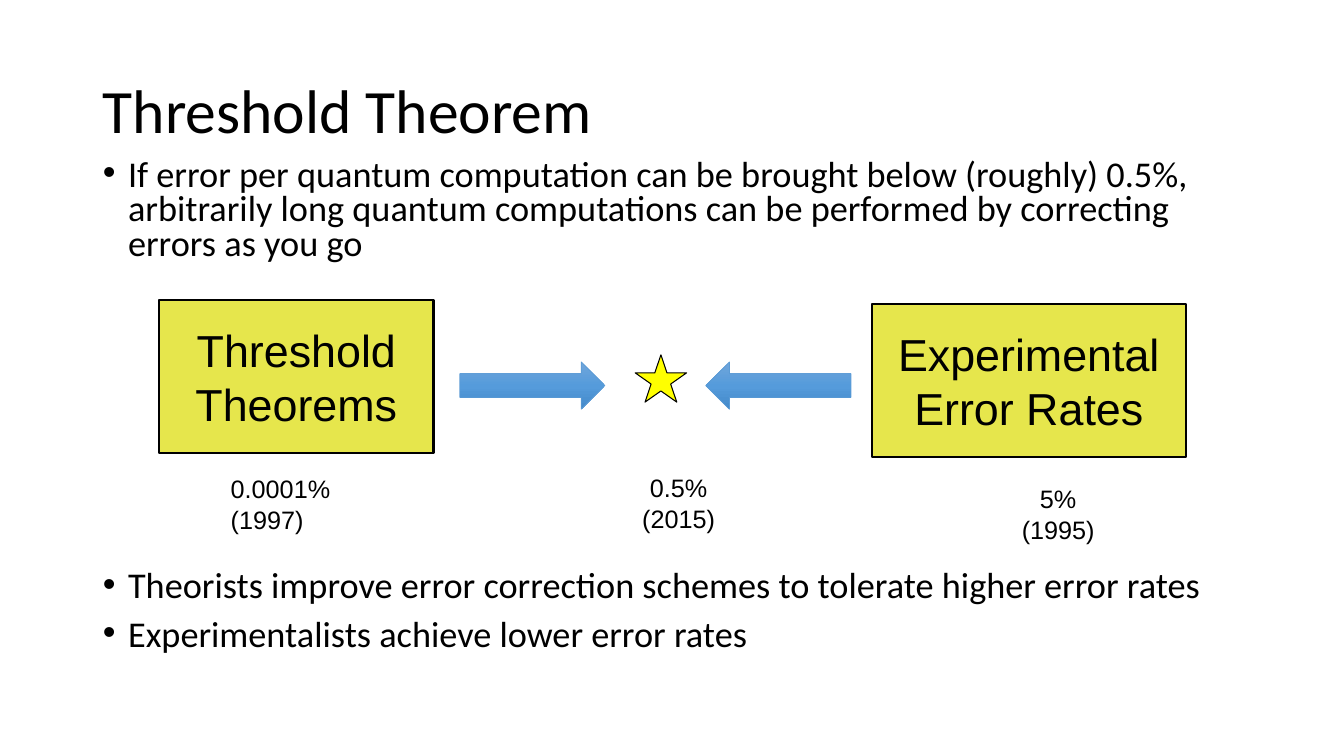
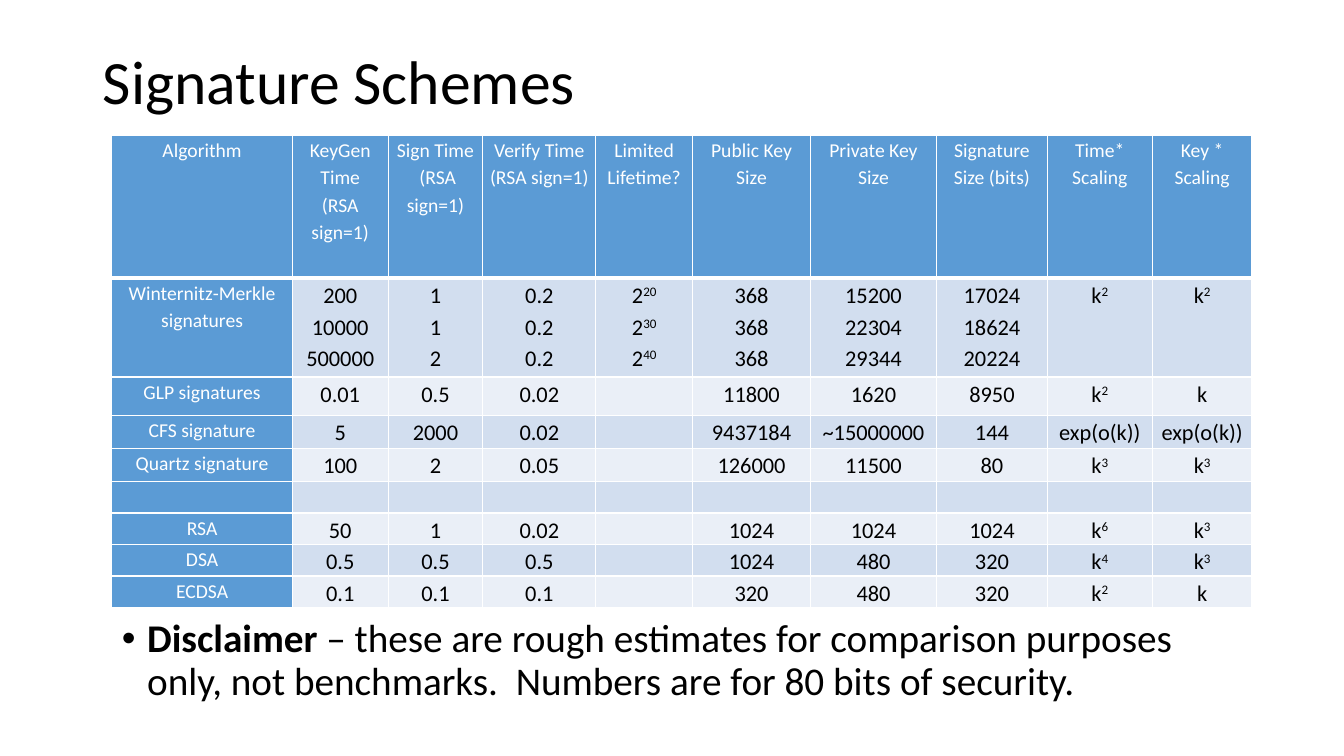
from copy import deepcopy
from dataclasses import dataclass

from lxml import etree
from pptx import Presentation
from pptx.dml.color import RGBColor
from pptx.enum.shapes import MSO_SHAPE as Preset
from pptx.enum.text import MSO_ANCHOR as Anchor, MSO_AUTO_SIZE as AutoSize, PP_ALIGN as Align
from pptx.oxml.ns import qn
from pptx.util import Inches, Pt

# Shared look
BLACK, WHITE, BLUE = "000000", "FFFFFF", "5B9BD5"
BOX_YELLOW, STAR_YELLOW = "E6E64C", "FFFF00"
BANDS = ("D2DEEF", "EAEFF7")
ARROW_STOPS = ((0, "71A6DB"), (0.5, "559BDB"), (1, "448ACA"))
BODY_FONT, DIAGRAM_FONT = "Calibri", "Arial"


@dataclass
class Area:
    left: float
    top: float
    width: float
    height: float

    def lengths(self):
        return [Inches(n) for n in (self.left, self.top, self.width, self.height)]


@dataclass
class Bullet:
    text: str
    lead: str = ""
    space_before: float = 10


@dataclass
class Block:
    """A diagram box or caption with one paragraph per line."""
    area: Area
    lines: tuple
    align: Align = Align.CENTER


BOXES = (
    Block(Area(1.58, 2.98, 2.72, 1.51), ("Threshold", "Theorems")),
    Block(Area(8.65, 3.02, 3.11, 1.51), ("Experimental", "Error Rates")),
)
CAPTIONS = (
    Block(Area(2.19, 4.65, 1.46, 0.66), ("0.0001%", "(1997)"), Align.LEFT),
    Block(Area(6.12, 4.64, 1.22, 0.66), ("0.5%", "(2015)")),
    Block(Area(9.89, 4.75, 1.21, 0.66), ("5%", "(1995)")),
)
ARROWS = (
    (Preset.RIGHT_ARROW, Area(4.56, 3.59, 1.44, 0.47)),
    (Preset.LEFT_ARROW, Area(7, 3.59, 1.44, 0.47)),
)
THRESHOLD_BULLETS = (
    Bullet("If error per quantum computation can be brought below (roughly) 0.5%, "
           "arbitrarily long quantum computations can be performed by correcting errors as you go"),
    # The wide gap leaves room for the diagram
    Bullet("Theorists improve error correction schemes to tolerate higher error rates",
           space_before=219),
    Bullet("Experimentalists achieve lower error rates"),
)
DISCLAIMER = Bullet(" – these are rough estimates for comparison purposes only, not benchmarks.  "
                    "Numbers are for 80 bits of security.", lead="Disclaimer")

# Table: "\n" parts paragraphs, "^" marks a superscript
COLUMN_WIDTHS = (1.79, 0.95, 0.94, 1.12, 0.96, 1.17, 1.25, 1.1, 1.04, 0.99)
ROW_HEIGHTS = (1.42, 0.98, 0.38, 0.33, 0.33, 0.31, 0.31, 0.31, 0.31)
SCHEMES = (
    ("Algorithm", "KeyGen Time\n(RSA sign=1)", "Sign Time\n (RSA sign=1)",
     "Verify Time\n(RSA sign=1)", "Limited Lifetime?", "Public Key Size", "Private Key Size",
     "Signature Size (bits)", "Time* Scaling", "Key *\nScaling"),
    ("Winternitz-Merkle signatures", "200\n10000\n500000", "1\n1\n2", "0.2\n0.2\n0.2",
     "2^20\n2^30\n2^40", "368\n368\n368", "15200\n22304\n29344", "17024\n18624\n20224",
     "k^2", "k^2"),
    ("GLP signatures", "0.01", "0.5", "0.02", "", "11800", "1620", "8950", "k^2", "k"),
    ("CFS signature", "5", "2000", "0.02", "", "9437184", "~15000000", "144",
     "exp(o(k))", "exp(o(k))"),
    ("Quartz signature", "100", "2", "0.05", "", "126000", "11500", "80", "k^3", "k^3"),
    ("",) * 10,
    ("RSA", "50", "1", "0.02", "", "1024", "1024", "1024", "k^6", "k^3"),
    ("DSA", "0.5", "0.5", "0.5", "", "1024", "480", "320", "k^4", "k^3"),
    ("ECDSA", "0.1", "0.1", "0.1", "", "320", "480", "320", "k^2", "k"),
)


def rgb(color: str) -> RGBColor:
    return RGBColor.from_string(color)


def apply(target, formats: dict) -> None:
    for name, value in formats.items():
        setattr(target, name, value)


def add_run(paragraph, text: str, size: float, color: str = BLACK,
            font: str = BODY_FONT, bold: bool = False):
    run = paragraph.add_run()
    run.text = text
    apply(run.font, {"name": font, "size": Pt(size), "bold": bold})
    run.font.color.rgb = rgb(color)
    return run


def next_paragraph(frame, index: int):
    return frame.add_paragraph() if index else frame.paragraphs[0]


def place(shape, area: Area) -> None:
    apply(shape, dict(zip(("left", "top", "width", "height"), area.lengths())))


# Titles and lists
def add_slide(presentation, title: str, title_top: float):
    slide = presentation.slides.add_slide(presentation.slide_layouts[1])
    place(slide.shapes.title, Area(0.92, title_top, 11.5, 1.45))
    frame = slide.shapes.title.text_frame
    apply(frame, {"vertical_anchor": Anchor.MIDDLE, "auto_size": AutoSize.NONE})
    apply(frame.paragraphs[0], {"alignment": Align.LEFT, "line_spacing": 0.9})
    add_run(frame.paragraphs[0], title, 44)
    return slide


def fill_body(slide, area: Area, bullets: tuple, size: float, line_spacing: float) -> None:
    body = slide.placeholders[1]
    place(body, area)
    body.text_frame.auto_size = AutoSize.NONE
    for index, bullet in enumerate(bullets):
        paragraph = next_paragraph(body.text_frame, index)
        apply(paragraph, {"line_spacing": line_spacing, "space_before": Pt(bullet.space_before)})
        properties = paragraph._p.get_or_add_pPr()
        properties.set("marL", str(Inches(0.25)))
        properties.set("indent", str(-Inches(0.25)))
        if bullet.lead:
            add_run(paragraph, bullet.lead, size, bold=True)
        add_run(paragraph, bullet.text, size)


# Diagram parts
def add_preset(slide, preset: Preset, area: Area, line_color: str, line_width: float):
    shape = slide.shapes.add_shape(preset, *area.lengths())
    shape.shadow.inherit = False
    shape.line.color.rgb = rgb(line_color)
    shape.line.width = Pt(line_width)
    return shape


def fill_solid(target, color: str) -> None:
    target.fill.solid()
    target.fill.fore_color.rgb = rgb(color)


def write_lines(frame, block: Block, size: float) -> None:
    for index, line in enumerate(block.lines):
        paragraph = next_paragraph(frame, index)
        paragraph.alignment = block.align
        add_run(paragraph, line, size, font=DIAGRAM_FONT)


def add_box(slide, block: Block) -> None:
    shape = add_preset(slide, Preset.RECTANGLE, block.area, BLACK, 1.45)
    fill_solid(shape, BOX_YELLOW)
    apply(shape.text_frame, {
        "word_wrap": False, "vertical_anchor": Anchor.MIDDLE,
        "margin_left": Inches(0.11), "margin_right": Inches(0.11),
        "margin_top": Inches(0.06), "margin_bottom": Inches(0.06)})
    write_lines(shape.text_frame, block, 32)


def add_caption(slide, block: Block) -> None:
    frame = slide.shapes.add_textbox(*block.area.lengths()).text_frame
    frame.word_wrap = True
    write_lines(frame, block, 18)


def add_arrow(slide, preset: Preset, area: Area) -> None:
    shape = add_preset(slide, preset, area, BLUE, 0.5)
    shape.fill.gradient()
    shape.fill.gradient_angle = 270
    # The default gradient has two stops; add the middle one
    stop_list = next(shape._element.iter(qn("a:gsLst")))
    stop_list.insert(1, deepcopy(stop_list[0]))
    for stop, (position, color) in zip(shape.fill.gradient_stops, ARROW_STOPS):
        stop.position = position
        stop.color.rgb = rgb(color)


# Table parts
def set_borders(cell, bottom_width: float) -> None:
    properties = cell._tc.get_or_add_tcPr()
    for side, width in (("L", 1), ("R", 1), ("T", 1), ("B", bottom_width)):
        line = etree.SubElement(properties, qn(f"a:ln{side}"), w=str(Pt(width)))
        solid = etree.SubElement(line, qn("a:solidFill"))
        etree.SubElement(solid, qn("a:srgbClr"), val=WHITE)


def write_cell(cell, text: str, size: float, color: str) -> None:
    apply(cell, {"margin_left": Inches(0.06), "margin_right": Inches(0.06),
                 "margin_top": 0, "margin_bottom": 0})
    for index, line in enumerate(text.split("\n")):
        paragraph = next_paragraph(cell.text_frame, index)
        apply(paragraph, {"alignment": Align.CENTER, "line_spacing": 1.15})
        base, _, exponent = line.partition("^")
        add_run(paragraph, base, size, color)
        if exponent:
            run = add_run(paragraph, exponent, size, color)
            run._r.get_or_add_rPr().set("baseline", "30000")


def add_scheme_table(slide) -> None:
    area = Area(1.11, 1.34, sum(COLUMN_WIDTHS), sum(ROW_HEIGHTS))
    table = slide.shapes.add_table(len(SCHEMES), len(COLUMN_WIDTHS), *area.lengths()).table
    apply(table, {"first_row": False, "horz_banding": False})
    for column, width in zip(table.columns, COLUMN_WIDTHS):
        column.width = Inches(width)
    for row_index, (values, height) in enumerate(zip(SCHEMES, ROW_HEIGHTS)):
        table.rows[row_index].height = Inches(height)
        for column_index, text in enumerate(values):
            cell = table.cell(row_index, column_index)
            is_header = row_index == 0 or column_index == 0
            set_borders(cell, 3 if row_index == 0 else 1)
            fill_solid(cell, BLUE if is_header else BANDS[(row_index - 1) % 2])
            write_cell(cell, text, 14 if is_header else 16, WHITE if is_header else BLACK)


# Slides
def build_threshold_slide(presentation) -> None:
    slide = add_slide(presentation, "Threshold Theorem", 0.4)
    fill_body(slide, Area(0.92, 1.53, 11.5, 5.39), THRESHOLD_BULLETS, 25.9, 0.8)
    for box in BOXES:
        add_box(slide, box)
    star = add_preset(slide, Preset.STAR_5_POINT, Area(6.3, 3.52, 0.51, 0.47), BLACK, 0.75)
    fill_solid(star, STAR_YELLOW)
    for caption in CAPTIONS:
        add_caption(slide, caption)
    for preset, area in ARROWS:
        add_arrow(slide, preset, area)


def build_signature_slide(presentation) -> None:
    slide = add_slide(presentation, "Signature Schemes", 0.11)
    fill_body(slide, Area(1.11, 6.09, 11.31, 1.07), (DISCLAIMER,), 28, 0.9)
    add_scheme_table(slide)


def main() -> None:
    presentation = Presentation()
    apply(presentation, {"slide_width": Inches(13.33), "slide_height": Inches(7.5)})
    build_threshold_slide(presentation)
    build_signature_slide(presentation)
    presentation.save("out.pptx")


if __name__ == "__main__":
    main()
